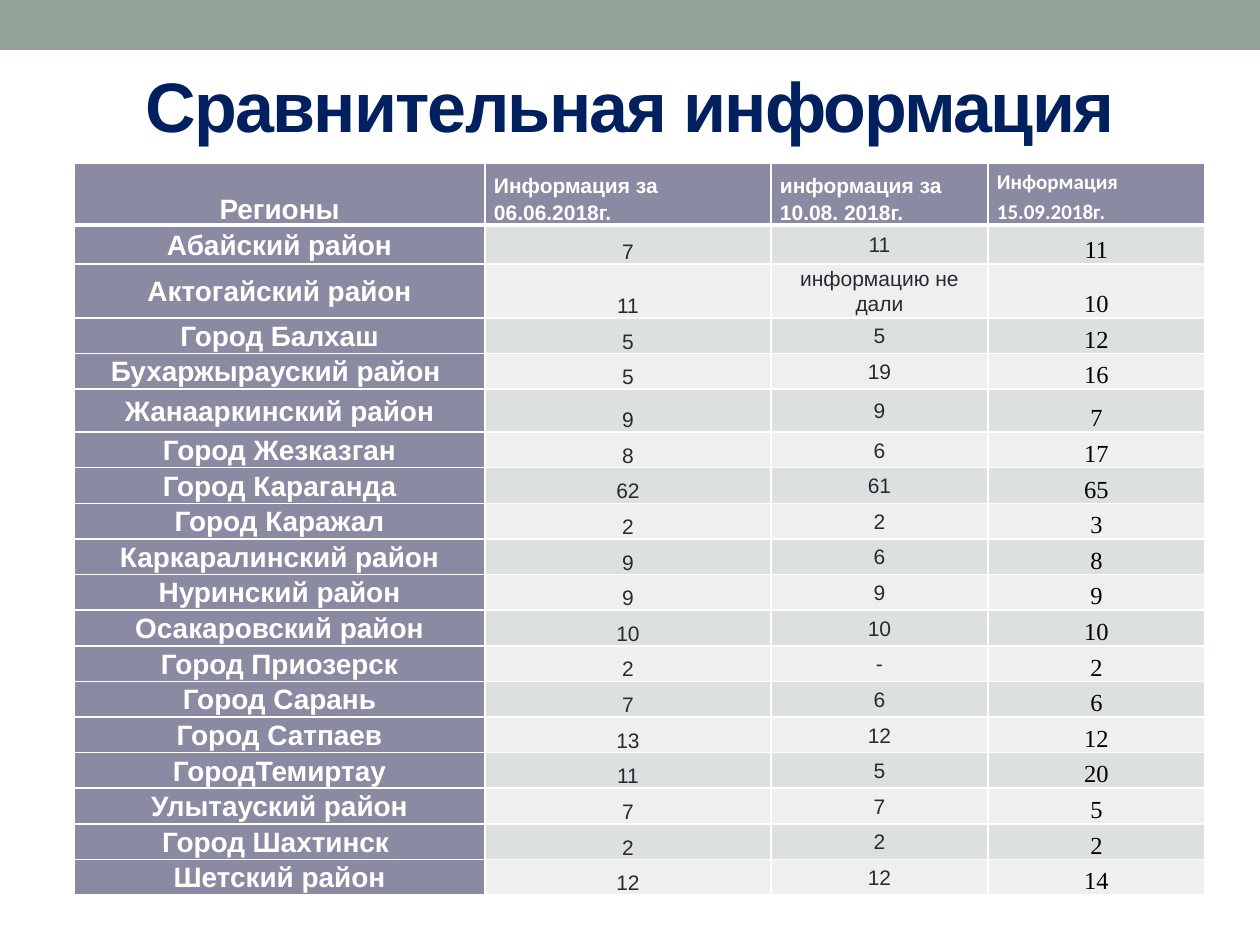
import pptx
import pptx.dml.color
import pptx.enum.shapes
import pptx.enum.text
import pptx.oxml
import pptx.oxml.ns
import pptx.util

PX = 914400 // 126
HUES = {
    "bar": "93A299", "title": "002060", "head": "8A8AA3", "ink": "292934",
    "black": "000000", "white": "FFFFFF", "odd": "DCE0DE", "even": "EEF0EF",
}
ALIGN = pptx.enum.text.PP_ALIGN
MID = pptx.enum.text.MSO_ANCHOR.MIDDLE
LOW = pptx.enum.text.MSO_ANCHOR.BOTTOM

COLS = [411, 286, 217, 217]
TALL = {0: 62, 1: 39, 2: 43, 4: 30, 5: 43}
ROW = 35
HEADS = ["Регионы", "Информация за\n06.06.2018г.",
         "информация за 10.08. 2018г.", "Информация 15.09.2018г."]
DATA = [
    ("Абайский район", "7", "11", "11"),
    ("Актогайский район", "11", "информацию не дали", "10"),
    ("Город Балхаш", "5", "5", "12"),
    ("Бухаржырауский район ", "5", "19", "16"),
    ("Жанааркинский район", "9", "9", "7"),
    ("Город Жезказган", "8", "6", "17"),
    ("Город Караганда", "62", "61", "65"),
    ("Город Каражал", "2", "2", "3"),
    ("Каркаралинский район", "9", "6", "8"),
    ("Нуринский район", "9", "9", "9"),
    ("Осакаровский район", "10", "10", "10"),
    ("Город Приозерск", "2", "-", "2"),
    ("Город Сарань", "7", "6", "6"),
    ("Город Сатпаев", "13", "12", "12"),
    ("ГородТемиртау", "11", "5", "20"),
    ("Улытауский район", "7", "7", "5"),
    ("Город Шахтинск ", "2", "2", "2"),
    ("Шетский район", "12", "12", "14"),
]
# Formats by column, for the header row and for the body rows
NAME = dict(size=16, hue="white", bold=True)
LABEL = dict(size=12, hue="white", bold=True, align=ALIGN.LEFT)
COUNT = dict(size=12, hue="ink")
LAST = dict(size=14, hue="black", font="Times New Roman", lead=1.0)
TOPS = [NAME, LABEL, LABEL, dict(LABEL, font="Calibri")]
BODY = [dict(NAME, lead=1.06), COUNT, dict(COUNT, lead=1.07), LAST]


def px(num):
    return pptx.util.Emu(num * PX)


def rgb(hue):
    return pptx.dml.color.RGBColor.from_string(HUES[hue])


def write(frame, text, size=12, hue="ink", bold=False, font="Arial",
          align=ALIGN.CENTER, lead=1.15, track=0):
    """Fill a text frame, one paragraph to a line of text."""
    frame.word_wrap = True
    for num, line in enumerate(text.split("\n")):
        para = frame.add_paragraph() if num else frame.paragraphs[0]
        para.alignment = align
        para.line_spacing = lead
        run = para.add_run()
        run.text = line
        run.font.name = font
        run.font.size = pptx.util.Pt(size)
        run.font.bold = bold
        run.font.color.rgb = rgb(hue)
        if track:
            run.font._element.set("spc", str(track * 100))


def edge(cell, side, width):
    """Draw one white border; call before the cell is filled."""
    space = pptx.oxml.ns.nsdecls("a")
    line = pptx.oxml.parse_xml(
        f'<a:ln{side} {space} w="{width * 12700}"><a:solidFill>'
        f'<a:srgbClr val="{HUES["white"]}"/></a:solidFill></a:ln{side}>')
    cell._tc.get_or_add_tcPr().append(line)


def add_bar(slide):
    bar = slide.shapes.add_shape(
        pptx.enum.shapes.MSO_SHAPE.RECTANGLE, 0, 0, px(1260), px(50))
    bar.shadow.inherit = False
    bar.fill.solid()
    bar.fill.fore_color.rgb = rgb("bar")
    bar.line.fill.background()


def add_title(slide, text):
    box = slide.shapes.add_textbox(px(63), 0, px(1134), px(210))
    box.text_frame.vertical_anchor = MID
    write(box.text_frame, text, size=40, hue="title", bold=True,
          lead=1.0, track=-1)


def set_cell(cell, text, row, col):
    for side in "LRTB":
        thick = (row == 0 and side == "B") or (row == 1 and side == "T")
        edge(cell, side, 3 if thick else 1)
    head = row == 0 or col == 0
    cell.fill.solid()
    cell.fill.fore_color.rgb = rgb("head" if head else
                                   "odd" if row % 2 else "even")
    tight = row > 0 and col == 3
    cell.margin_left = cell.margin_right = px(1 if tight else 9)
    cell.margin_top = px(1 if tight else 0)
    cell.margin_bottom = 0
    cell.vertical_anchor = MID if row and col in (0, 2) else LOW
    write(cell.text_frame, text, **(BODY if row else TOPS)[col])


def add_grid(slide, rows):
    highs = [TALL.get(num, ROW) for num in range(len(rows))]
    grid = slide.shapes.add_table(
        len(rows), len(COLS), px(74), px(163),
        px(sum(COLS)), px(sum(highs))).table
    for col, width in zip(grid.columns, COLS):
        col.width = px(width)
    for row, texts in enumerate(rows):
        grid.rows[row].height = px(highs[row])
        for col, text in enumerate(texts):
            set_cell(grid.cell(row, col), text, row, col)


def main():
    deck = pptx.Presentation()
    deck.slide_width, deck.slide_height = px(1260), px(945)
    slide = deck.slides.add_slide(deck.slide_layouts[6])
    add_bar(slide)
    add_title(slide, "Сравнительная информация")
    add_grid(slide, [HEADS] + DATA)
    deck.save("out.pptx")


if __name__ == "__main__":
    main()
